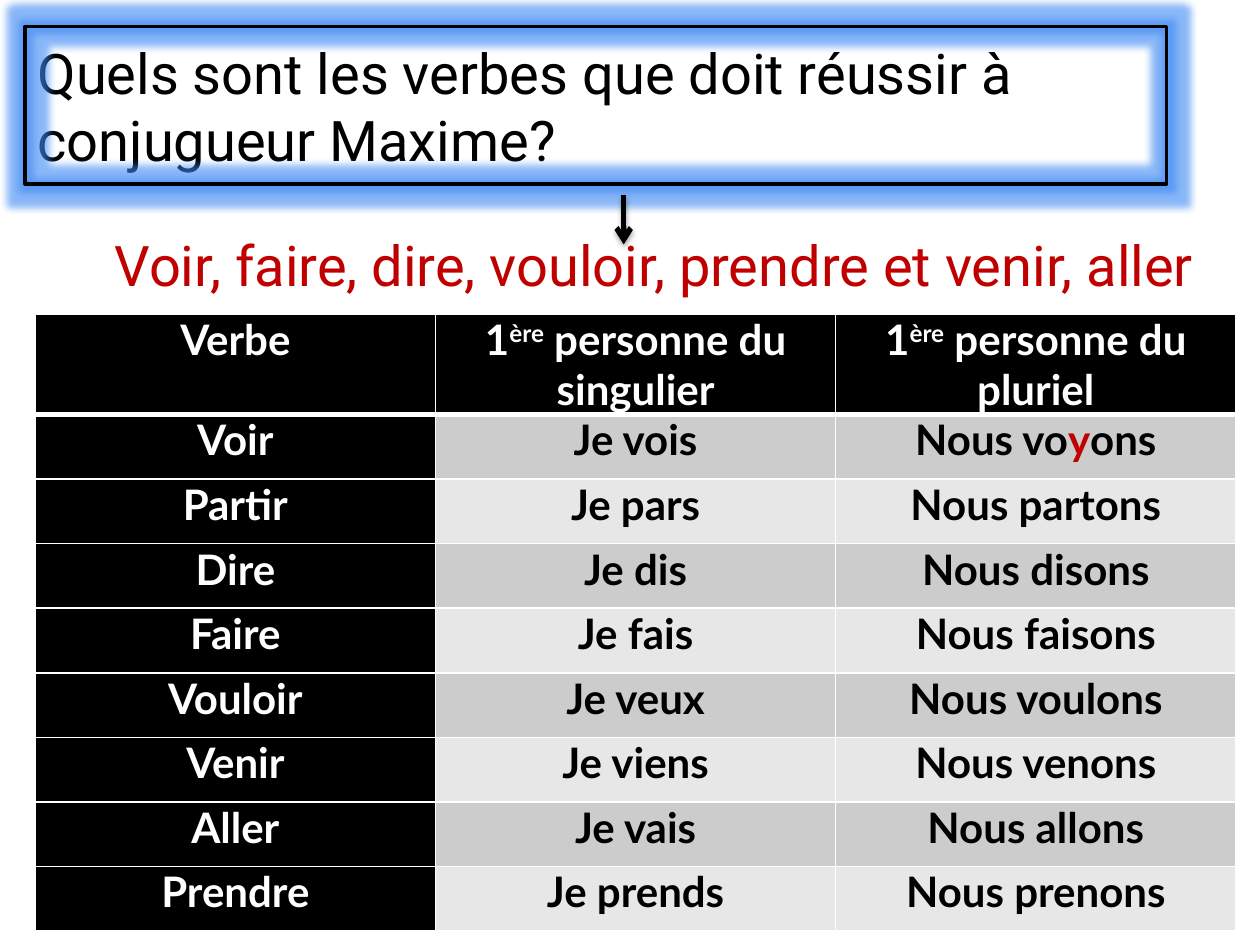
from lxml.etree import SubElement
from pptx import Presentation
from pptx.dml.color import RGBColor
from pptx.enum.shapes import MSO_CONNECTOR, MSO_SHAPE
from pptx.enum.text import MSO_ANCHOR, PP_ALIGN
from pptx.oxml import parse_xml
from pptx.oxml.ns import nsdecls, qn
from pptx.util import Inches, Pt

BLACK, WHITE, RED = "000000", "FFFFFF", "C00000"
BANDS = ("CCCCCC", "E7E7E7")

QUESTION = "Quels sont les verbes que doit réussir à conjugueur Maxime?"
ANSWER = "Voir, faire, dire, vouloir, prendre et venir, aller "

# A cell is a string or a list of (text, format) runs.
SUPERSCRIPT, HIGHLIGHT = {"baseline": "30000"}, {"color": RED}
HEADER = (
    "Verbe",
    [("1", {}), ("ère", SUPERSCRIPT), (" personne du singulier", {})],
    [("1", {}), ("ère", SUPERSCRIPT), (" personne du pluriel", {})],
)
VERBS = [
    ("Voir", "Je vois", [("Nous vo", {}), ("y", HIGHLIGHT), ("ons", {})]),
    ("Partir", "Je pars", "Nous partons"),
    ("Dire", "Je dis", "Nous disons"),
    ("Faire", "Je fais", "Nous faisons"),
    ("Vouloir", "Je veux", "Nous voulons"),
    ("Venir", "Je viens", "Nous venons"),
    ("Aller", "Je vais", "Nous allons"),
    ("Prendre", "Je prends", "Nous prenons"),
]

TABLE_BOX = (0.28, 2.49, 9.53, 4.9)
HEADER_HEIGHT = 0.8
CELL_FORMAT = {
    "margin_left": Inches(0.07), "margin_right": Inches(0.07),
    "margin_top": 0, "margin_bottom": 0, "vertical_anchor": MSO_ANCHOR.TOP,
}


def rgb(color):
    return RGBColor.from_string(color)


def inches(box):
    return [Inches(value) for value in box]


def add_run(paragraph, text, size, font, color, bold=False, baseline=None):
    run = paragraph.add_run()
    run.text = text
    for name, value in {"size": Pt(size), "name": font, "bold": bold}.items():
        setattr(run.font, name, value)
    run.font.color.rgb = rgb(color)
    if baseline:
        run.font._element.set("baseline", baseline)


def add_sentence(slide, box, text, color, align):
    frame = slide.shapes.add_textbox(*inches(box)).text_frame
    frame.word_wrap = True
    frame.vertical_anchor = MSO_ANCHOR.MIDDLE
    frame.paragraphs[0].alignment = align
    add_run(frame.paragraphs[0], text, 32, "Roboto", color)


def add_glowing_frame(slide, box):
    frame = slide.shapes.add_shape(MSO_SHAPE.RECTANGLE, *inches(box))
    frame.fill.background()
    frame.line.color.rgb = rgb(BLACK)
    frame.line.width = Pt(2)
    frame.shadow.inherit = False
    effects = frame._element.spPr.find(qn("a:effectLst"))
    effects.append(parse_xml(
        f'<a:glow {nsdecls("a")} rad="{Inches(0.11)}"><a:srgbClr val="3C88F4">'
        '<a:alpha val="60000"/></a:srgbClr></a:glow>'))


def add_arrow(slide, start, end):
    arrow = slide.shapes.add_connector(MSO_CONNECTOR.STRAIGHT, *inches(start + end))
    arrow.line.color.rgb = rgb(BLACK)
    arrow.line.width = Pt(3)
    SubElement(arrow.line._get_or_add_ln(), qn("a:tailEnd"), type="arrow")
    arrow._element.spPr.append(parse_xml(
        f'<a:effectLst {nsdecls("a")}><a:outerShdw blurRad="{Pt(3.1)}" '
        f'dist="{Pt(1.8)}" dir="5400000" rotWithShape="0"><a:srgbClr val="{BLACK}">'
        '<a:alpha val="35000"/></a:srgbClr></a:outerShdw></a:effectLst>'))


def set_borders(cell, widths):
    """Draw white borders; widths maps lnL, lnR, lnT and lnB to points."""
    properties = cell._tc.get_or_add_tcPr()
    for position, (side, width) in enumerate(widths.items()):
        properties.insert(position, parse_xml(
            f'<a:{side} {nsdecls("a")} w="{Pt(width)}"><a:solidFill>'
            f'<a:srgbClr val="{WHITE}"/></a:solidFill></a:{side}>'))


def fill_cell(cell, content, row, column):
    dark = row == 0 or column == 0
    cell.fill.solid()
    cell.fill.fore_color.rgb = rgb(BLACK if dark else BANDS[(row - 1) % 2])
    for name, value in CELL_FORMAT.items():
        setattr(cell, name, value)
    set_borders(cell, {"lnL": 1, "lnR": 1, "lnT": 3 if row == 1 else 1,
                       "lnB": 3 if row == 0 else 1})
    paragraph = cell.text_frame.paragraphs[0]
    paragraph.alignment = PP_ALIGN.CENTER
    runs = [(content, {})] if isinstance(content, str) else content
    for text, extra in runs:
        style = {"color": WHITE if dark else BLACK, **extra}
        add_run(paragraph, text, 24, "Lato", bold=True, **style)


def add_conjugations(slide):
    rows = [HEADER, *VERBS]
    width, height = TABLE_BOX[2:]
    table = slide.shapes.add_table(len(rows), len(HEADER), *inches(TABLE_BOX)).table
    for column in table.columns:
        column.width = Inches(width / len(HEADER))
    for row in table.rows:
        row.height = Inches((height - HEADER_HEIGHT) / len(VERBS))
    table.rows[0].height = Inches(HEADER_HEIGHT)
    for r, row in enumerate(rows):
        for c, content in enumerate(row):
            fill_cell(table.cell(r, c), content, r, c)


def main():
    deck = Presentation()
    deck.slide_width, deck.slide_height = Inches(10), Inches(7.5)
    slide = deck.slides.add_slide(deck.slide_layouts[6])
    add_sentence(slide, (0.5, 1.78, 9.5, 0.63), ANSWER, RED, PP_ALIGN.CENTER)
    add_sentence(slide, (0.2, 0.21, 9.5, 1.25), QUESTION, BLACK, PP_ALIGN.LEFT)
    add_glowing_frame(slide, (0.2, 0.21, 9.06, 1.25))
    add_arrow(slide, (4.95, 1.55), (4.95, 1.94))
    add_conjugations(slide)
    deck.save("out.pptx")


if __name__ == "__main__":
    main()
